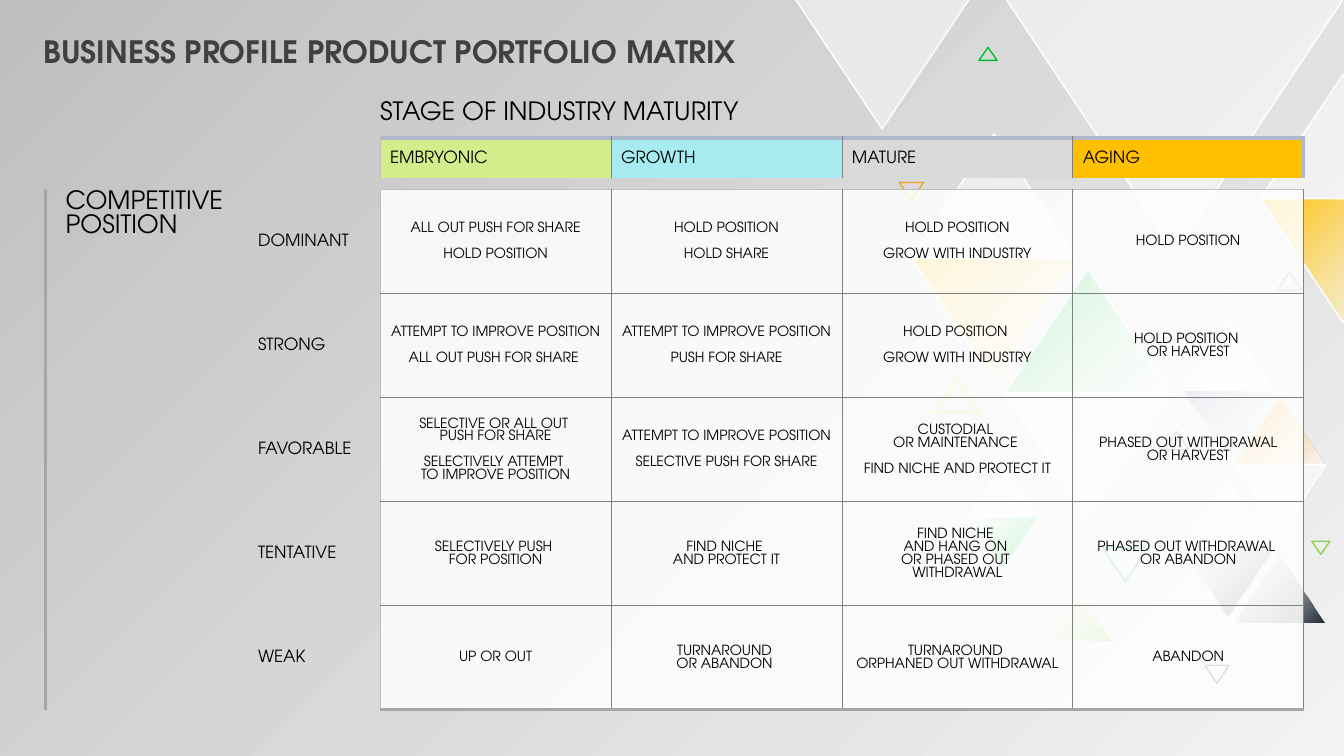
from lxml import etree
from pptx import Presentation
from pptx import util as u
from pptx.dml.color import RGBColor
from pptx.enum import shapes, text
from pptx.oxml.ns import qn

FONT = "TeX Gyre Adventor"
GRAY, PALE, EDGE, BLUE = ("808080", .5), ("BFBFBF", .5), ("A6A6A6", 3), ("ADB9CA", 3)
NO_STYLE = "{2D5ABB26-0587-4C30-8999-92F81FD0307C}"

# Fill stops: colour, position, opacity
GLASS = [("FFFFFF", 0, 50)]


def fade_out(c):
    return [(c, 0, 100), ("FFFFFF", 100, 50)]


def fade_in(c):
    return [("FFFFFF", 0, 50), (c, 82, 100)]


# Left, top, width, height, upside down, fill stops, outline
TRIANGLES = [
    (9.04, 1.33, 1.64, 1.23, False, GLASS, "FFFFFF"),
    (9.04, 2.56, 1.64, 1.23, True, fade_out("FFC000"), "FFFFFF"),
    (9.97, 2.67, 1.64, 1.23, False, fade_in("00BD32"), "FFFFFF"),
    (9.97, 3.9, 1.64, 1.23, True, GLASS, "FFFFFF"),
    (9.97, -.02, 3.36, 2.52, True, GLASS, "FFFFFF"),
    (12.24, 5.5, .9, .68, False, fade_out("222A35"), None),
    (11.73, 5.44, .9, .68, True, fade_in("44546A"), None),
    (11.73, 4.77, .9, .68, False, GLASS, "FFFFFF"),
    (11.74, 3.2, .9, .68, False, GLASS, "FFFFFF"),
    (11.74, 3.88, .9, .68, True, fade_out("8497B0"), None),
    (12.25, 3.94, .9, .68, False, fade_in("F0A622"), None),
    (12.25, 4.61, .9, .68, True, GLASS, "FFFFFF"),
    (10.35, 5.85, .67, .5, False, fade_out("92D050"), None),
    (9.62, 5.12, .67, .5, True, fade_in("00BD32"), None),
    (9.62, 4.62, .67, .5, False, GLASS, "FFFFFF"),
    (12.5, .74, 1.64, 1.23, False, GLASS, "FFFFFF"),
    (12.5, 1.97, 1.64, 1.23, True, fade_out("FFC000"), "FFFFFF"),
    (10.94, 5.44, .44, .33, True, None, "00BD32"),
    (9.27, 3.76, .44, .33, False, None, "FFC000"),
    (11.55, 4.28, .24, .18, False, None, "44546A"),
    (11.95, 6.6, .24, .18, True, None, "222A35"),
    (8.92, 1.81, .24, .18, True, None, "F0A622"),
    (12.67, 2.7, .24, .18, False, None, "8497B0"),
    (9.71, .47, .18, .13, False, None, "00BD32"),
    (13.01, 5.37, .18, .13, True, None, "92D050"),
    (10.38, 1.39, .44, .33, False, None, "F0A622"),
    (7.88, -.02, 1.74, 1.3, True, GLASS, "FFFFFF"),
]

STAGES = [("EMBRYONIC", "D3ED8D"), ("GROWTH", "A6EBF0"), ("MATURE", "D9D9D9"), ("AGING", "FFC000")]

# Each cell: paragraphs set apart by "|", lines within one by "\n"
POSITIONS = [
    ("DOMINANT", ["ALL OUT PUSH FOR SHARE|HOLD POSITION", "HOLD POSITION|HOLD SHARE",
                  "HOLD POSITION|GROW WITH INDUSTRY", "HOLD POSITION"]),
    ("STRONG", ["ATTEMPT TO IMPROVE POSITION|ALL OUT PUSH FOR SHARE ",
                "ATTEMPT TO IMPROVE POSITION|PUSH FOR SHARE",
                "HOLD POSITION |GROW WITH INDUSTRY", "HOLD POSITION \nOR HARVEST"]),
    ("FAVORABLE", ["SELECTIVE OR ALL OUT \nPUSH FOR SHARE|SELECTIVELY ATTEMPT \nTO IMPROVE POSITION",
                   "ATTEMPT TO IMPROVE POSITION|SELECTIVE PUSH FOR SHARE",
                   "CUSTODIAL \nOR MAINTENANCE |FIND NICHE AND PROTECT IT",
                   "PHASED OUT WITHDRAWAL\nOR HARVEST"]),
    ("TENTATIVE", ["SELECTIVELY PUSH \nFOR POSITION", "FIND NICHE \nAND PROTECT IT",
                   "FIND NICHE \nAND HANG ON \nOR PHASED OUT \nWITHDRAWAL",
                   "PHASED OUT WITHDRAWAL \nOR ABANDON"]),
    ("WEAK", ["UP OR OUT", "TURNAROUND \nOR ABANDON ",
              "TURNAROUND \nORPHANED OUT WITHDRAWAL", "ABANDON"]),
]


def rgb(c):
    return RGBColor.from_string(c)


def add_color(parent, c, opacity):
    clr = etree.SubElement(parent, qn("a:srgbClr"), val=c)
    if opacity < 100:
        etree.SubElement(clr, qn("a:alpha"), val=str(opacity * 1000))


def paint(fill, holder, stops):
    """Fill with one colour, or with a gradient when there are several stops."""
    fill.solid()
    fill.fore_color.rgb = rgb(stops[0][0])
    # Borders and outlines have their own fills, so only the last level counts
    solid = [e for e in holder.iter(qn("a:solidFill")) if e.getparent().tag in
             (qn("p:spPr"), qn("p:bgPr"), qn("a:tcPr"))][0]
    if len(stops) == 1:
        solid.remove(solid[0])
        add_color(solid, stops[0][0], stops[0][2])
        return
    grad = etree.Element(qn("a:gradFill"), rotWithShape="1")
    gs_list = etree.SubElement(grad, qn("a:gsLst"))
    for c, pos, opacity in stops:
        add_color(etree.SubElement(gs_list, qn("a:gs"), pos=str(pos * 1000)), c, opacity)
    etree.SubElement(grad, qn("a:lin"), ang=str(225 * 60000), scaled="0")
    solid.getparent().replace(solid, grad)


def add_run(p, words, size, c="000000", bold=False):
    r = p.add_run()
    r.text = words
    r.font.name, r.font.size, r.font.bold = FONT, u.Pt(size), bold
    r.font.color.rgb = rgb(c)


def add_triangles(s):
    group = s.shapes.add_group_shape()
    for x, y, w, h, upside_down, stops, outline in TRIANGLES:
        sp = group.shapes.add_shape(shapes.MSO_SHAPE.ISOSCELES_TRIANGLE, *map(u.Inches, (x, y, w, h)))
        sp.shadow.inherit = False
        sp.rotation = 180 if upside_down else 0
        if stops:
            paint(sp.fill, sp._element.spPr, stops)
        else:
            sp.fill.background()
        if outline:
            sp.line.color.rgb = rgb(outline)
            sp.line.width = u.Pt(1)
        else:
            sp.line.fill.background()


def add_title(s, x, y, w, h):
    sp = s.shapes.title
    sp.left, sp.top, sp.width, sp.height = map(u.Inches, (x, y, w, h))
    tf = sp.text_frame
    tf.word_wrap = True
    tf.vertical_anchor = text.MSO_ANCHOR.MIDDLE
    p = tf.paragraphs[0]
    p.alignment = text.PP_ALIGN.LEFT
    add_run(p, "BUSINESS PROFILE PRODUCT PORTFOLIO MATRIX", 22, "404040", True)


def set_borders(cell, **sides):
    """Draw the given sides; a side given as None is kept clear."""
    tc_pr = cell._tc.get_or_add_tcPr()
    for side in "LRTB":
        if side in sides:
            c, width = sides[side] or (None, 0)
            ln = etree.SubElement(tc_pr, qn("a:ln" + side), w=str(u.Pt(width)))
            if c:
                add_color(etree.SubElement(ln, qn("a:solidFill")), c, 100)
            else:
                etree.SubElement(ln, qn("a:noFill"))


def write(cell, words, size, left=.01, right=.01, align="LEFT", anchor="MIDDLE", leading=None):
    cell.margin_left, cell.margin_right = u.Inches(left), u.Inches(right)
    cell.margin_top, cell.margin_bottom = u.Inches(.01), 0
    cell.vertical_anchor = text.MSO_ANCHOR[anchor]
    for i, block in enumerate(words.split("|")):
        p = cell.text_frame.add_paragraph() if i else cell.text_frame.paragraphs[0]
        p.alignment = text.PP_ALIGN[align]
        if leading:
            p.line_spacing = u.Pt(leading)
            p.space_before = u.Pt(leading if i else 0)
        for j, line in enumerate(block.split("\n")):
            if j:
                p.add_line_break()
            add_run(p, line, size)


def add_matrix(s, x, y, w, h):
    table = s.shapes.add_table(8, 6, *map(u.Inches, (x, y, w, h))).table
    table.first_row = table.horz_banding = False
    table._tbl.tblPr.find(qn("a:tableStyleId")).text = NO_STYLE
    for col, width in zip(table.columns, [2.01, 1.31] + [2.29] * 4):
        col.width = u.Inches(width)
    for row, height in zip(table.rows, [.49, .4, .11] + [5.16 / 5] * 5):
        row.height = u.Inches(height)
    for cell in table.iter_cells():
        cell.margin_top = cell.margin_bottom = 0
        cell.text_frame.paragraphs[0]._p.get_or_add_endParaRPr().set("sz", "100")

    # Stages across the top
    table.cell(0, 2).merge(table.cell(0, 3))
    write(table.cell(0, 2), "STAGE OF INDUSTRY MATURITY", 18, left=0)
    for i, (stage, c) in enumerate(STAGES):
        set_borders(table.cell(0, 2 + i), B=BLUE)
        cell = table.cell(1, 2 + i)
        write(cell, stage, 12, left=.1, right=.1)
        set_borders(cell, L=GRAY if i else PALE, R=BLUE if i == 3 else GRAY, T=BLUE, B=None)
        paint(cell.fill, cell._tc, [(c, 0, 100)])
        set_borders(table.cell(2, 2 + i), L=None, R=None, T=None, B=PALE)

    # Positions down the side, with the advice for each stage
    write(table.cell(3, 0), "COMPETITIVE POSITION", 18, left=.2, anchor="TOP", leading=17)
    for n, (position, advice) in enumerate(POSITIONS):
        row = 3 + n
        set_borders(table.cell(row, 0), L=EDGE)
        write(table.cell(row, 1), position, 12, left=.1)
        set_borders(table.cell(row, 1), R=PALE)
        for i, words in enumerate(advice):
            cell = table.cell(row, 2 + i)
            write(cell, words, 10, align="CENTER", leading=9.2)
            set_borders(cell, L=GRAY if i else PALE, R=GRAY, T=GRAY if n else PALE,
                        B=EDGE if n == 4 else GRAY)
            paint(cell.fill, cell._tc, [("FFFFFF", 0, 85)])


def main():
    prs = Presentation()
    prs.slide_width, prs.slide_height = u.Inches(13.33), u.Inches(7.5)
    s = prs.slides.add_slide(prs.slide_layouts[5])
    paint(s.background.fill, s._element.cSld, [("F2F2F2", 0, 40), ("BFBFBF", 100, 100)])
    add_triangles(s)
    add_title(s, .33, .27, 7.99, .47)
    add_matrix(s, .45, .88, 12.48, 6.16)
    prs.save("out.pptx")


if __name__ == "__main__":
    main()
